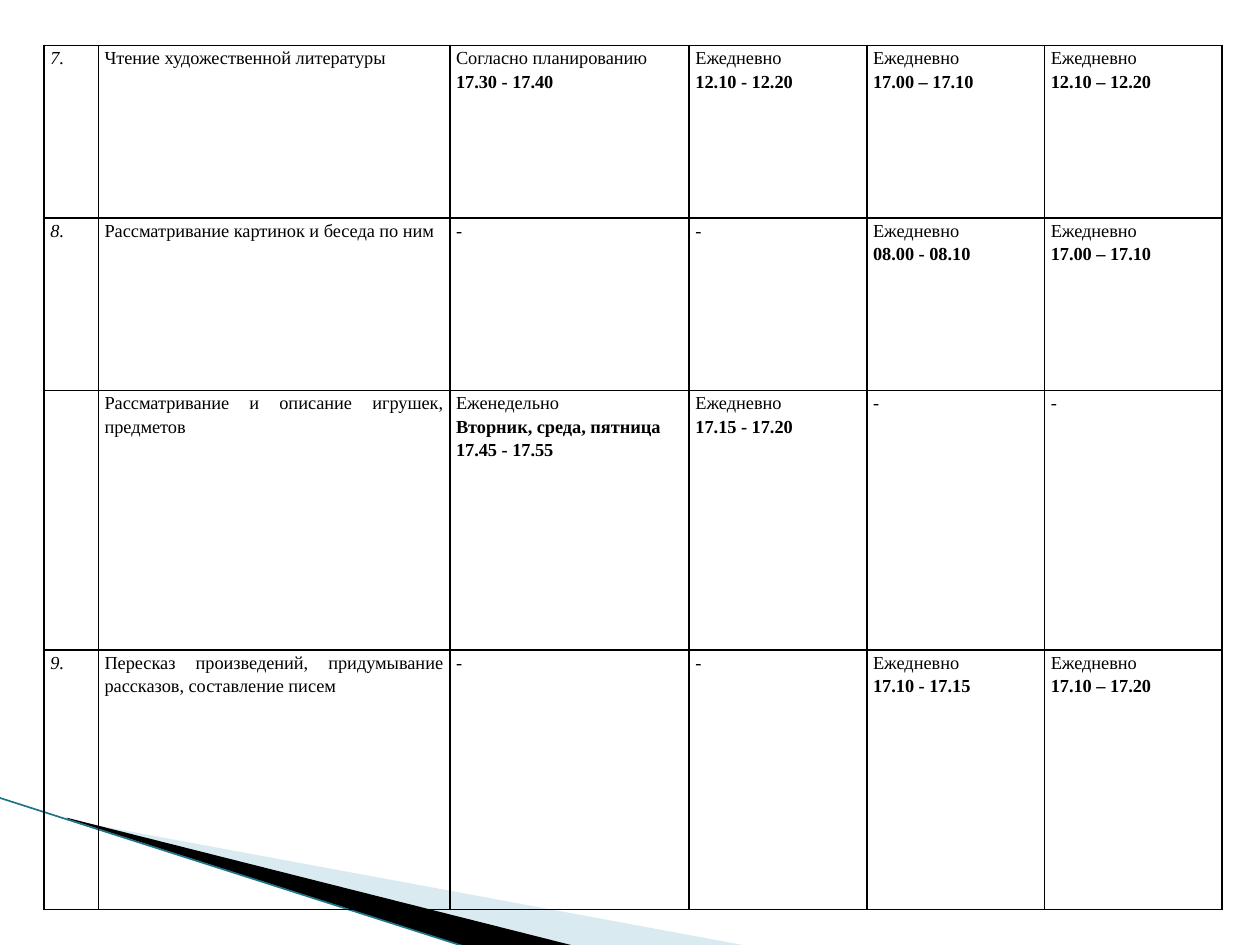
from lxml.etree import SubElement
from pptx import Presentation
from pptx.dml.color import RGBColor
from pptx.enum.text import PP_ALIGN
from pptx.oxml.ns import qn
from pptx.util import Inches, Pt

THEME = {
    "font": "Times New Roman", "size": 10.5, "ink": "000000",
    "pale": "A0CBDC", "teal": "1F7489", "border": 1, "stripe": 0.95,
}

# Content: each cell is a list of lines; "*" marks a bold line
ROWS = [
    (["7."], ["Чтение художественной литературы"],
     ["Согласно планированию", "*17.30 - 17.40"],
     ["Ежедневно", "*12.10 - 12.20"],
     ["Ежедневно", "*17.00 – 17.10"],
     ["Ежедневно", "*12.10 – 12.20"]),
    (["8."], ["Рассматривание картинок и беседа по ним"],
     ["-"], ["-"],
     ["Ежедневно", "*08.00 - 08.10"],
     ["Ежедневно", "*17.00 – 17.10"]),
    ([], ["Рассматривание и описание игрушек, предметов"],
     ["Еженедельно", "*Вторник, среда, пятница", "*17.45 - 17.55"],
     ["Ежедневно", "*17.15 - 17.20"],
     ["-"], ["-"]),
    (["9."], ["Пересказ произведений, придумывание рассказов, составление писем"],
     ["-"], ["-"],
     ["Ежедневно", "*17.10 - 17.15"],
     ["Ежедневно", "*17.10 – 17.20"]),
]
COL_WIDTHS = [0.43, 2.79, 1.9, 1.41, 1.41, 1.41]
ROW_HEIGHTS = [1.37, 1.37, 2.06, 2.06]
TABLE_LEFT, TABLE_TOP = 0.35, 0.36
NUMBER_COL, ACTIVITY_COL, FIRST_GROUP_COL = 0, 1, 2

# Corner wedges: points, colour, opacity in percent
WEDGES = [
    ([(0.55, 6.51), (5.95, 7.51), (4.56, 7.51), (0.55, 6.5)], THEME["pale"], 40),
    ([(0.53, 6.49), (4.57, 7.51), (3.72, 7.52), (0.54, 6.5)], THEME["ink"], 100),
]
STRIPE = [(-0.01, 6.33), (3.71, 7.52)]


def rgb(name):
    return RGBColor.from_string(name)


def add_wedge(s, points, color, opacity):
    pts = [(Inches(x), Inches(y)) for x, y in points]
    builder = s.shapes.build_freeform(*pts[0])
    builder.add_line_segments(pts[1:], close=True)
    sp = builder.convert_to_shape()
    sp.shadow.inherit = False
    sp.line.fill.background()
    sp.fill.solid()
    sp.fill.fore_color.rgb = rgb(color)
    if opacity < 100:
        clr = sp.fill._xPr.find(qn("a:solidFill"))[0]
        SubElement(clr, qn("a:alpha"), val=str(opacity * 1000))


def add_stripe(s, start, end):
    line = s.shapes.add_connector(1, *(Inches(v) for v in start + end))
    line.line.color.rgb = rgb(THEME["teal"])
    line.line.width = Pt(THEME["stripe"])
    SubElement(line._element.spPr, qn("a:effectLst"))


def write_line(p, text, align=PP_ALIGN.JUSTIFY, bold=False, italic=False, before=0):
    p.alignment = align
    p.line_spacing = 1.15
    p.space_before = Pt(before)
    r = p.add_run()
    r.text = text
    r.font.name, r.font.size = THEME["font"], Pt(THEME["size"])
    r.font.bold, r.font.italic = bold, italic
    r.font.color.rgb = rgb(THEME["ink"])


def style_cell(cell):
    cell.margin_left = cell.margin_right = Inches(0.05)
    cell.margin_top = cell.margin_bottom = 0
    tc_pr = cell._tc.get_or_add_tcPr()
    for side in ("lnL", "lnR", "lnT", "lnB"):
        ln = SubElement(tc_pr, qn(f"a:{side}"), w=str(Pt(THEME["border"])))
        fill = SubElement(ln, qn("a:solidFill"))
        SubElement(fill, qn("a:srgbClr"), val=THEME["ink"])
    cell.fill.background()


def add_schedule(s):
    frame = s.shapes.add_table(
        len(ROWS), len(COL_WIDTHS), Inches(TABLE_LEFT), Inches(TABLE_TOP),
        Inches(sum(COL_WIDTHS)), Inches(sum(ROW_HEIGHTS)))
    table = frame.table
    table.first_row = table.horz_banding = False
    for col, width in zip(table.columns, COL_WIDTHS):
        col.width = Inches(width)
    for row, height, cells in zip(table.rows, ROW_HEIGHTS, ROWS):
        row.height = Inches(height)
        for i, (cell, lines) in enumerate(zip(row.cells, cells)):
            style_cell(cell)
            tf = cell.text_frame
            for n, text in enumerate(lines):
                p = tf.add_paragraph() if n else tf.paragraphs[0]
                write_line(
                    p, text.lstrip("*"), bold=text.startswith("*"),
                    italic=i == NUMBER_COL,
                    align=PP_ALIGN.LEFT if i == FIRST_GROUP_COL else PP_ALIGN.JUSTIFY)


def main():
    prs = Presentation()
    prs.slide_width, prs.slide_height = Inches(10), Inches(7.5)
    s = prs.slides.add_slide(prs.slide_layouts[6])
    # Corner decoration, behind the table
    for wedge in WEDGES:
        add_wedge(s, *wedge)
    add_stripe(s, *STRIPE)
    # Schedule table
    add_schedule(s)
    prs.save("out.pptx")


if __name__ == "__main__":
    main()
